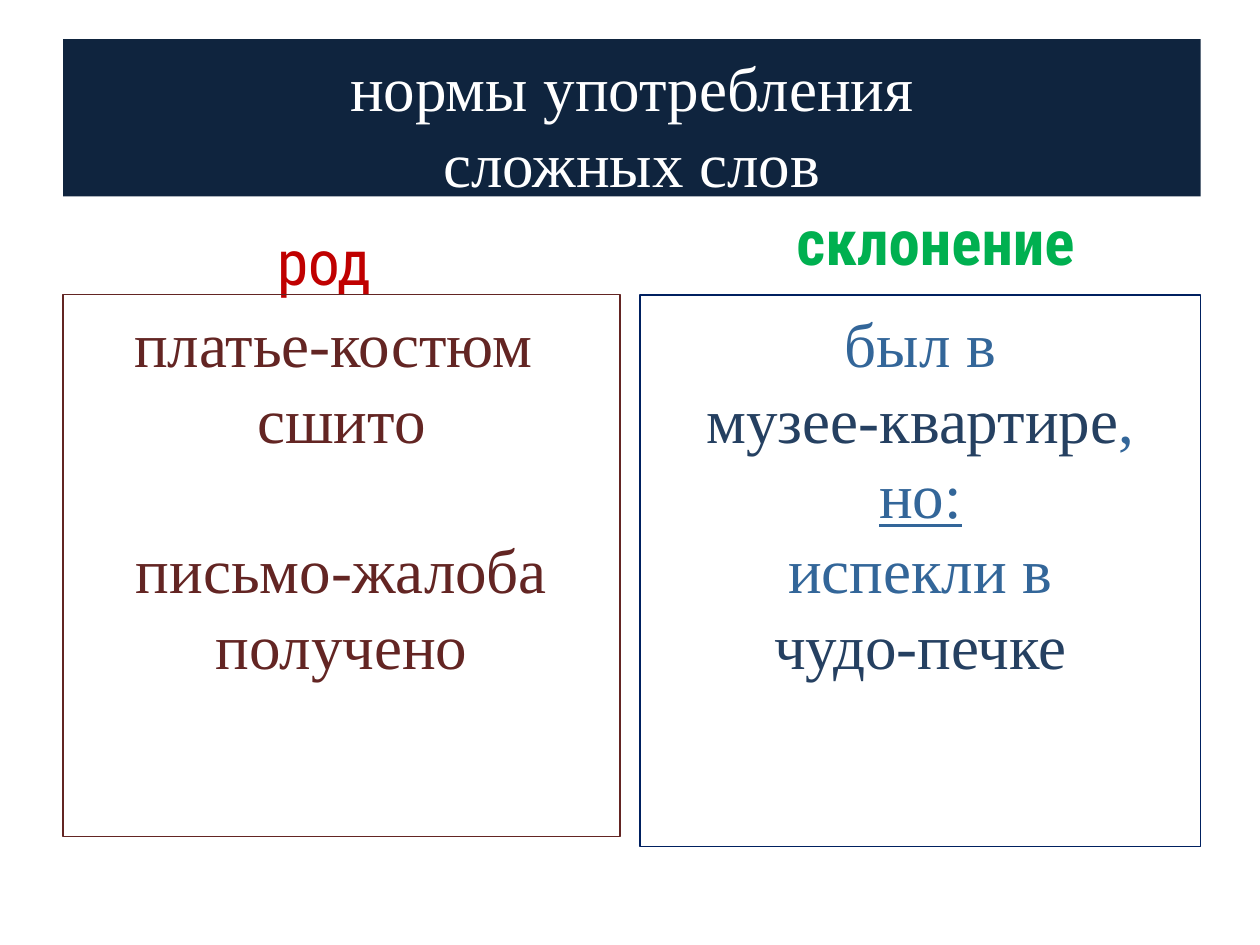
"""Builds a slide on the gender and declension of Russian compound words."""
from pptx import Presentation
from pptx.dml.color import RGBColor
from pptx.enum.shapes import MSO_SHAPE as Shape
from pptx.enum.text import MSO_ANCHOR as Anchor, MSO_AUTO_SIZE as AutoSize, PP_ALIGN as Align
from pptx.util import Inches, Pt

COLORS = {
    "navy": "0F243E", "white": "FFFFFF", "red": "C00000", "green": "00B050",
    "maroon": "632523", "border": "002060", "blue": "336699", "ink": "254061",
}
SERIF, HEADING = "Times New Roman", "Roboto Condensed"
SIZE, LINE = Pt(36), Pt(43.1)
LEFT, RIGHT, RIGHT_EDGE = 0.5, 5.08, 9.53
BAR_TOP, PANEL_TOP = 0.31, 2.34


def color(name):
    """Return the named palette colour."""
    return RGBColor.from_string(COLORS[name])


def place(shape, left, top, width, height):
    """Set a shape's position and size in inches."""
    shape.left, shape.top = Inches(left), Inches(top)
    shape.width, shape.height = Inches(width), Inches(height)


def write(shape, lines, font=SERIF, anchor=Anchor.TOP, bold=False, pitch=None):
    """Fill a shape with centred lines made of (text, colour, underline) spans."""
    frame = shape.text_frame
    frame.word_wrap, frame.auto_size = True, AutoSize.NONE
    frame.vertical_anchor = anchor
    frame.margin_top = Inches(0.08 if pitch else 0.05)
    frame.text = "\n".join("" for _ in lines)
    for para, spans in zip(frame.paragraphs, lines):
        para.alignment = Align.CENTER
        para.space_before = Pt(0)
        if pitch:
            para.line_spacing = pitch
        for text, tint, underline in spans:
            span = para.add_run()
            span.text = text
            span.font.name, span.font.size = font, SIZE
            span.font.bold, span.font.underline = bold, underline
            span.font.color.rgb = color(tint)


def plain(tint, *texts):
    """Make single-colour lines."""
    return [[(text, tint, False)] for text in texts]


def add_title(page):
    """Format the title placeholder as a dark bar."""
    title = page.shapes.title
    place(title, LEFT, BAR_TOP, RIGHT_EDGE - LEFT, 1.25)
    title.fill.solid()
    title.fill.fore_color.rgb = color("navy")
    write(title, plain("white", "нормы употребления", "сложных слов"), pitch=LINE)


def add_heading(page, area, text, tint, anchor=Anchor.TOP, bold=False):
    """Add a column heading."""
    box = page.shapes.add_textbox(*map(Inches, area))
    write(box, plain(tint, text), HEADING, anchor, bold)


def add_panel(page, left, width, height, border, lines):
    """Add an outlined panel of examples."""
    panel = page.shapes.add_shape(Shape.RECTANGLE, *map(Inches, (left, PANEL_TOP, width, height)))
    panel.shadow.inherit = False
    panel.fill.background()
    panel.line.color.rgb, panel.line.width = color(border), Pt(0.75)
    write(panel, lines, pitch=LINE)
    return panel


def main():
    """Build and save the slide."""
    deck = Presentation()
    deck.slide_width, deck.slide_height = Inches(10), Inches(7.5)
    page = deck.slides.add_slide(deck.slide_layouts[5])
    add_title(page)
    add_heading(page, (RIGHT, 1.56, 4.69, 0.7), "склонение", "green", Anchor.BOTTOM, True)
    add_heading(page, (0.7, 1.72, 3.75, 0.63), "род", "red")
    gender = add_panel(page, LEFT, 4.42, 4.3, "maroon", plain(
        "maroon", "платье-костюм ", "сшито", "письмо-жалоба", "получено"))
    gender.text_frame.paragraphs[2].space_before = LINE
    add_panel(page, RIGHT, RIGHT_EDGE - RIGHT, 4.38, "border", [
        *plain("blue", "был в"),
        [("музее-квартире", "ink", False), (",", "blue", False)],
        [("но:", "blue", True)],
        *plain("blue", "испекли в"),
        *plain("ink", "чудо-печке"),
    ])
    deck.save("out.pptx")


main()
